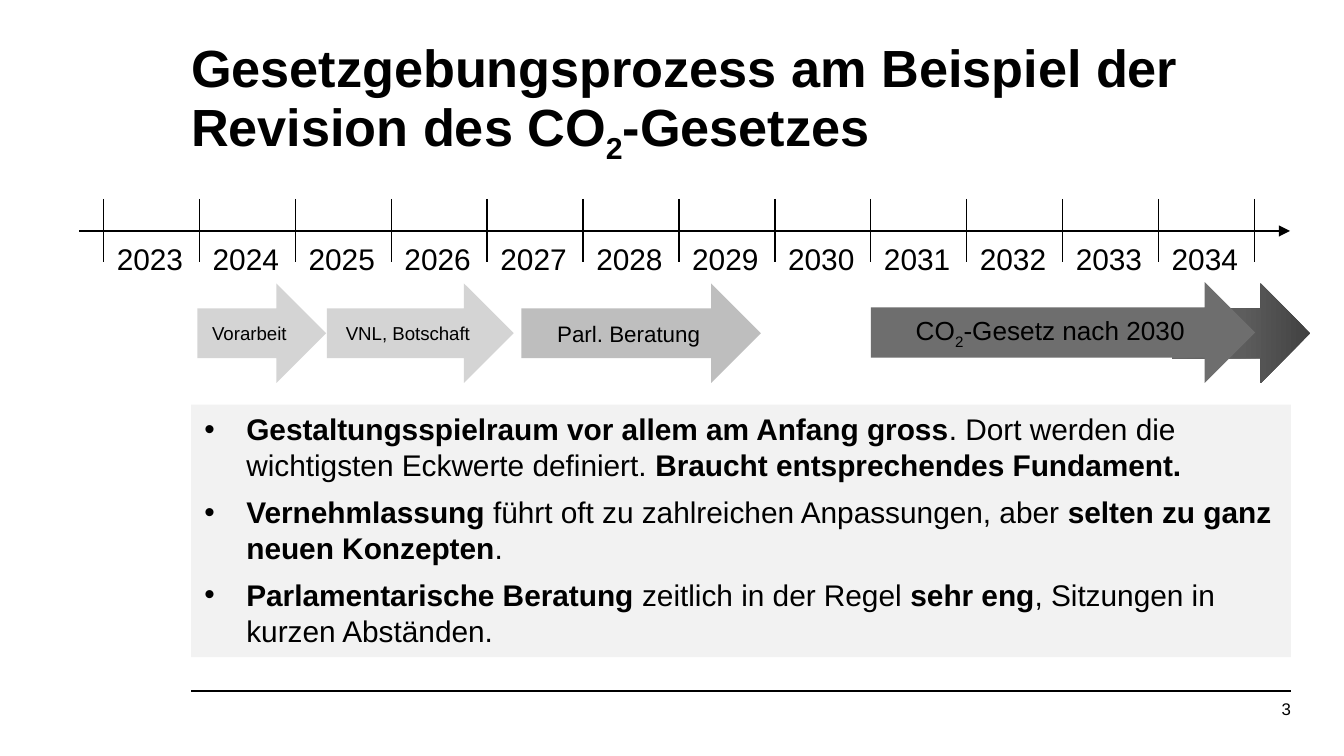
from copy import deepcopy
from typing import NamedTuple

from lxml.etree import SubElement
from pptx import Presentation
from pptx.dml.color import RGBColor
from pptx.enum.shapes import MSO_CONNECTOR as CONN, MSO_SHAPE as SHAPE
from pptx.enum.text import MSO_ANCHOR as ANCHOR, PP_ALIGN as ALIGN
from pptx.oxml.ns import qn
from pptx.util import Emu, Pt

EMU_PER_PX = 914400 / 192
FONT = "Arial"
COLORS = {
    "ink": "000000", "panel": "F2F2F2", "prep": "D4D4D4", "debate": "BEBEBE",
    "law": "6E6E6E", "law_mid": "5D5D5D", "law_dark": "414141",
}


class Box(NamedTuple):
    x: int
    y: int
    w: int
    h: int


class Run(NamedTuple):
    text: str
    bold: bool = False
    sub: bool = False


class Phase(NamedTuple):
    box: Box
    color: str
    size: int
    runs: list[Run]


LEFT, WIDTH = 273, 1571
AXIS_Y, FIRST_TICK, YEAR_W = 330, 148, 137
YEARS = range(2023, 2035)

TITLE = [Run("Gesetzgebungsprozess am Beispiel der Revision des CO", True),
         Run("2", True, True), Run("-Gesetzes", True)]
OUTLOOK = Box(1674, 405, 198, 142)
PHASES = [
    Phase(Box(745, 405, 342, 142), "debate", 12, [Run("Parl. Beratung")]),
    Phase(Box(1244, 403, 549, 144), "law", 14,
          [Run("CO"), Run("2", sub=True), Run("-Gesetz nach 2030")]),
    Phase(Box(282, 405, 184, 142), "prep", 10, [Run("Vorarbeit")]),
    Phase(Box(467, 405, 267, 142), "prep", 10, [Run("VNL, Botschaft")]),
]
POINTS = [
    [Run("Gestaltungsspielraum vor allem am Anfang gross", True),
     Run(". Dort werden die wichtigsten Eckwerte definiert. "),
     Run("Braucht entsprechendes Fundament.", True)],
    [Run("Vernehmlassung", True),
     Run(" führt oft zu zahlreichen Anpassungen, aber "),
     Run("selten zu ganz neuen Konzepten", True), Run(".")],
    [Run("Parlamentarische Beratung ", True), Run("zeitlich in der Regel "),
     Run("sehr eng", True), Run(", Sitzungen in kurzen Abständen.")],
]


def px(n: int) -> Emu:
    return Emu(round(n * EMU_PER_PX))


def rgb(name: str) -> RGBColor:
    return RGBColor.from_string(COLORS[name])


def add_runs(p, runs: list[Run], size: int) -> None:
    for run in runs:
        r = p.add_run()
        r.text = run.text
        r.font.name, r.font.size, r.font.bold = FONT, Pt(size), run.bold
        r.font.color.rgb = rgb("ink")
        if run.sub:
            r.font._element.set("baseline", "-25000")


def add_text(s, box: Box, runs: list[Run], size: int, inset: bool = True):
    sp = s.shapes.add_textbox(*map(px, box))
    tf = sp.text_frame
    tf.word_wrap = True
    if not inset:
        tf.margin_left = tf.margin_right = tf.margin_top = tf.margin_bottom = 0
    add_runs(tf.paragraphs[0], runs, size)
    return tf


def add_line(s, x1: int, y1: int, x2: int, y2: int, arrow: bool = False) -> None:
    cx = s.shapes.add_connector(CONN.STRAIGHT, *map(px, (x1, y1, x2, y2)))
    cx.line.color.rgb = rgb("ink")
    cx.line.width = Pt(0.75)
    if arrow:
        SubElement(cx.line._get_or_add_ln(), qn("a:tailEnd"), type="triangle")
    SubElement(cx._element.spPr, qn("a:effectLst"))


def add_filled(s, kind: SHAPE, box: Box, color: str):
    sp = s.shapes.add_shape(kind, *map(px, box))
    sp.shadow.inherit = False
    sp.fill.solid()
    sp.fill.fore_color.rgb = rgb(color)
    sp.line.fill.background()
    sp.text_frame.word_wrap = True
    return sp


def add_phase(s, phase: Phase) -> None:
    tf = add_filled(s, SHAPE.RIGHT_ARROW, phase.box, phase.color).text_frame
    tf.vertical_anchor = ANCHOR.MIDDLE
    p = tf.paragraphs[0]
    p.alignment = ALIGN.CENTER
    add_runs(p, phase.runs, phase.size)


def add_outlook(s) -> None:
    """Arrow that darkens towards its tip."""
    sp = add_filled(s, SHAPE.RIGHT_ARROW, OUTLOOK, "law")
    sp.fill.gradient()
    sp.fill.gradient_angle = 180
    stops = sp._element.spPr.find(qn("a:gradFill")).find(qn("a:gsLst"))
    stops.insert(1, deepcopy(stops[0]))
    shades = ("law_dark", "law_mid", "law")
    for i, (stop, color) in enumerate(zip(sp.fill.gradient_stops, shades)):
        stop.position = i / 2
        stop.color.rgb = rgb(color)


def add_timeline(s) -> None:
    add_line(s, 113, AXIS_Y, 1843, AXIS_Y, arrow=True)
    for i in range(len(YEARS) + 1):
        x = FIRST_TICK + i * YEAR_W
        add_line(s, x, 284, x, 374)
    for i, year in enumerate(YEARS):
        box = Box(FIRST_TICK + i * YEAR_W, 334, YEAR_W, 71)
        add_text(s, box, [Run(str(year))], 16)


def add_points(s) -> None:
    tf = add_filled(s, SHAPE.RECTANGLE, Box(LEFT, 578, WIDTH, 361), "panel").text_frame
    tf.vertical_anchor = ANCHOR.TOP
    for i, runs in enumerate(POINTS):
        p = tf.add_paragraph() if i else tf.paragraphs[0]
        pPr = p._p.get_or_add_pPr()
        pPr.set("marL", str(px(60)))
        pPr.set("indent", str(-px(60)))
        SubElement(pPr, qn("a:buFont"), typeface=FONT)
        SubElement(pPr, qn("a:buChar"), char="•")
        p.alignment = ALIGN.LEFT
        p.space_after = Pt(6)
        add_runs(p, runs, 16)


def main() -> None:
    prs = Presentation()
    prs.slide_width, prs.slide_height = px(1920), px(1080)
    s = prs.slides.add_slide(prs.slide_layouts[6])

    add_line(s, LEFT, 987, LEFT + WIDTH, 987)
    tf = add_text(s, Box(1749, 998, 95, 29), [Run("3")], 9, inset=False)
    tf.paragraphs[0].alignment = ALIGN.RIGHT
    tf = add_text(s, Box(LEFT, 44, WIDTH, 142), TITLE, 28, inset=False)
    tf.paragraphs[0].line_spacing = Pt(36)

    add_timeline(s)
    add_phase(s, PHASES[0])
    add_outlook(s)
    for phase in PHASES[1:]:
        add_phase(s, phase)
    add_points(s)
    prs.save("out.pptx")


if __name__ == "__main__":
    main()
